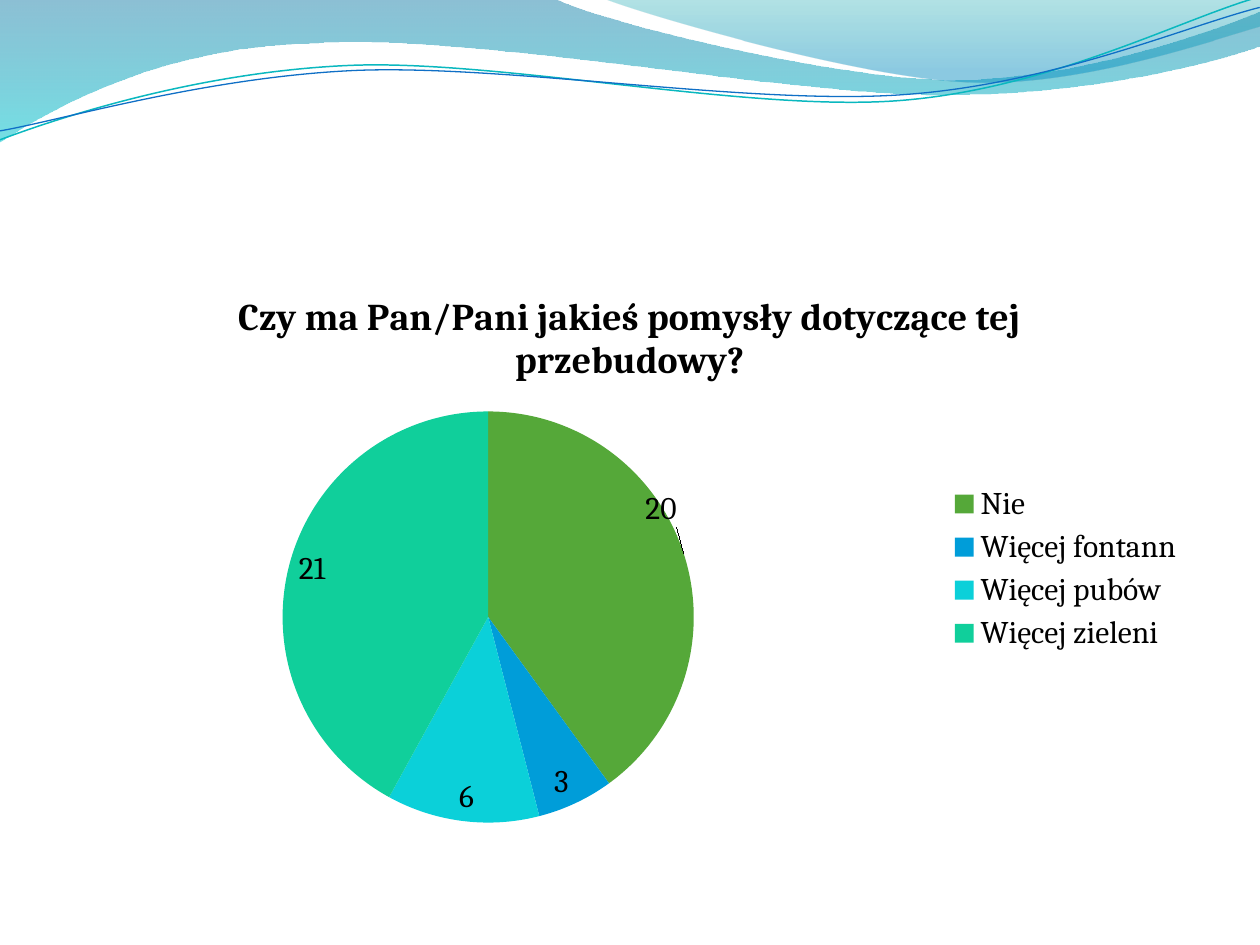
import math

from lxml import etree
from pptx import Presentation
from pptx import util as u
from pptx.chart.data import CategoryChartData
from pptx.dml.color import RGBColor
from pptx.enum import chart as ch
from pptx.oxml import parse_xml
from pptx.oxml.ns import nsdecls, qn

BLACK = RGBColor(0x00, 0x00, 0x00)
DEEP_BLUE = RGBColor(0x00, 0x74, 0xA1)
CYAN = RGBColor(0x00, 0xC6, 0xCF)
TEAL = RGBColor(0x00, 0xA1, 0xA9)
SKY = RGBColor(0x00, 0x8B, 0xBF)
LINE_TEAL = RGBColor(0x0A, 0xB8, 0xBF)
LINE_BLUE = RGBColor(0x0F, 0x6F, 0xC6)
SLICES = [RGBColor(0x55, 0xA8, 0x39), RGBColor(0x00, 0x9D, 0xD9),
          RGBColor(0x0B, 0xD0, 0xD9), RGBColor(0x10, 0xCF, 0x9B)]
FONT = "Cambria"
QUESTION = "Czy ma Pan/Pani jakieś pomysły dotyczące tej przebudowy?"
ANSWERS = {"Nie": 20, "Więcej fontann": 3, "Więcej pubów": 6, "Więcej zieleni": 21}
WAVE_TILT = -2.7

WIDE_BAND = [
    [(0, 0)], [(11.18, -0.03)],
    [(12.09, 0.43), (16.87, 1.6), (19.25, 1.6)],
    [(21.67, 1.6), (24.33, 0.66), (25.4, 0.23)],
    [(25.43, 0.91)],
    [(24.97, 1.12), (22.1, 1.93), (18.95, 1.91)],
    [(15.8, 1.91), (9.7, 0.71), (6.53, 0.86)],
    [(3.28, 0.91), (1.17, 2.11), (-0.03, 2.87)],
]
RIGHT_BAND = [
    [(12.17, -0.03)],
    [(12.93, 0.28), (17.32, 1.57), (19.53, 1.65)],
    [(21.74, 1.75), (24.41, 0.81), (25.4, 0.53)],
    [(25.4, 0)],
]
TEAL_WAVE = [
    [(0, 2.82)],
    [(1.22, 2.36), (4.01, 1.45), (7.04, 1.32)],
    [(10.03, 1.19), (15.06, 2.26), (18.11, 2.03)],
    [(21.16, 1.8), (23.83, 0.38), (25.35, -0.05)],
]
BLUE_WAVE = [
    [(0, 2.64)],
    [(1.19, 2.44), (4.17, 1.55), (7.19, 1.42)],
    [(10.24, 1.3), (15.16, 2.13), (18.21, 1.91)],
    [(21.23, 1.7), (23.9, 0.53), (25.4, 0.15)],
]


def turn(segments, degrees):
    """Rotate segments about the midpoint between their two ends."""
    (x0, y0), (x1, y1) = segments[0][0], segments[-1][-1]
    cx, cy = (x0 + x1) / 2, (y0 + y1) / 2
    cos, sin = math.cos(math.radians(degrees)), math.sin(math.radians(degrees))
    return [[(cx + (x - cx) * cos - (y - cy) * sin,
              cy + (x - cx) * sin + (y - cy) * cos) for x, y in seg]
            for seg in segments]


def add_outline(s, left, top, segments, close):
    """Draw a freeform of lines and cubic curves from the given corner."""
    points = [(left + u.Cm(x), top + u.Cm(y)) for seg in segments for x, y in seg]
    builder = s.shapes.build_freeform(*points[0])
    builder.add_line_segments(points[1:], close=close)
    sp = builder.convert_to_shape()
    sp.shadow.inherit = False
    lines = iter(list(sp._element.iter(qn("a:lnTo"))))
    for seg in segments[1:]:
        first, *others = [next(lines) for _ in seg]
        if others:
            first.tag = qn("a:cubicBezTo")
        for line in others:
            first.append(line[0])
            line.getparent().remove(line)
    return sp


def add_band(s, left, top, segments, stops):
    """Draw a closed band with a downward translucent gradient."""
    sp = add_outline(s, left, top, segments, True)
    sp.line.fill.background()
    sp.fill.gradient()
    sp.fill.gradient_angle = 270
    for stop, (position, color, _) in zip(sp.fill.gradient_stops, stops):
        stop.position = position
        stop.color.rgb = color
    for clr, (_, _, opacity) in zip(sp._element.spPr.iter(qn("a:srgbClr")), stops):
        etree.SubElement(clr, qn("a:alpha"), val=str(opacity * 1000))


def add_wave(s, left, top, segments, color, width):
    """Draw an open, slightly tilted wavy line."""
    sp = add_outline(s, left, top, turn(segments, -WAVE_TILT), False)
    sp.rotation = WAVE_TILT
    sp.fill.background()
    sp.line.color.rgb = color
    sp.line.width = u.Pt(width)


def add_header(s, left, top):
    """Draw the wave decoration from the given corner."""
    add_band(s, left, top, WIDE_BAND, [(0, DEEP_BLUE, 45), (1, CYAN, 55)])
    add_band(s, left, top, RIGHT_BAND, [(0, TEAL, 30), (0.8, SKY, 45)])
    add_wave(s, left, top, TEAL_WAVE, LINE_TEAL, 0.85)
    add_wave(s, left, top, BLUE_WAVE, LINE_BLUE, 0.75)


def make_layout(**values):
    """Return a manual chart layout element."""
    items = "".join(f'<c:{name} val="{value}"/>' for name, value in values.items())
    return parse_xml(f'<c:layout {nsdecls("c")}><c:manualLayout>{items}'
                     '</c:manualLayout></c:layout>')


def style_font(font, size, bold=False):
    """Apply the chart typeface."""
    font.name, font.size, font.bold = FONT, u.Pt(size), bold
    font.color.rgb = BLACK


def add_pie(s, left, top, width, height):
    """Place the survey pie chart in the given box."""
    data = CategoryChartData()
    data.categories = list(ANSWERS)
    data.add_series(QUESTION, list(ANSWERS.values()))
    chart = s.shapes.add_chart(ch.XL_CHART_TYPE.PIE, left, top, width, height, data).chart
    style_font(chart.font, 18)

    chart.has_title = True
    tf = chart.chart_title.text_frame
    tf.text = QUESTION
    style_font(tf.paragraphs[0].runs[0].font, 21.6, True)
    chart.chart_title.include_in_layout = False

    chart.has_legend = True
    chart.legend.position = ch.XL_LEGEND_POSITION.RIGHT
    chart.legend.include_in_layout = False
    style_font(chart.legend.font, 18)

    plot = chart.plots[0]
    plot.vary_by_categories = True
    series = plot.series[0]
    for i, color in enumerate(SLICES):
        fill = series.points[i].format.fill
        fill.solid()
        fill.fore_color.rgb = color

    labels = series.data_labels
    labels.show_value = True
    labels.position = ch.XL_LABEL_POSITION.BEST_FIT
    style_font(labels.font, 18)
    series.points[0].data_label.position = ch.XL_LABEL_POSITION.BEST_FIT
    label = next(series._element.iter(qn("c:dLbl")))
    label.find(qn("c:idx")).addnext(make_layout(x=-0.04, y=-0.04))

    area = chart._chartSpace.chart.plotArea
    for old in area.findall(qn("c:layout")):
        area.remove(old)
    area.insert(0, make_layout(layoutTarget="inner", xMode="edge", yMode="edge",
                               x=0.19, y=0.24, w=0.37, h=0.68))


def main():
    """Build the survey slide."""
    prs = Presentation()
    prs.slide_width, prs.slide_height = u.Cm(25.4), u.Cm(19.05)
    s = prs.slides.add_slide(prs.slide_layouts[6])
    add_header(s, 0, 0)
    add_pie(s, u.Cm(1.27), u.Cm(5.37), u.Cm(22.86), u.Cm(12.19))
    prs.save("out.pptx")


if __name__ == "__main__":
    main()
